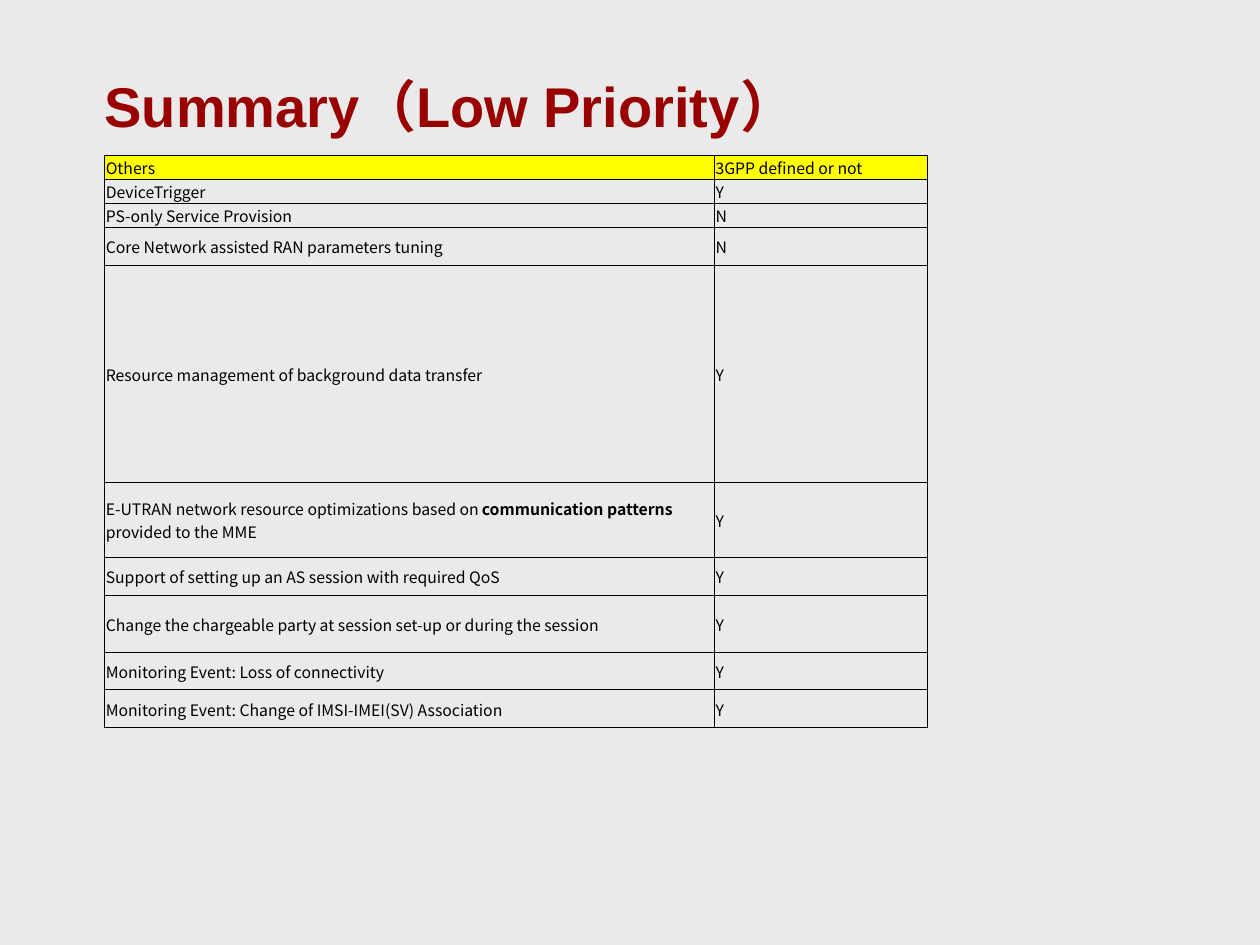
from lxml.etree import SubElement
from pptx import Presentation
from pptx.dml.color import RGBColor
from pptx.enum.text import MSO_ANCHOR, MSO_AUTO_SIZE, PP_ALIGN
from pptx.oxml import parse_xml
from pptx.oxml.ns import nsdecls, qn
from pptx.util import Inches, Pt

COLORS = {"background": "EAEAEA", "title": "990000", "header": "FFFF00", "ink": "000000"}
TITLE_FONT = {"name": "Arial", "size": Pt(32), "bold": True}
CELL_FONT = {"name": "Noto Sans CJK SC", "size": Pt(9), "bold": False}
CELL_FORMAT = {
    "vertical_anchor": MSO_ANCHOR.MIDDLE,
    "margin_left": Inches(0.01),
    "margin_right": Inches(0.01),
    "margin_top": Inches(0.01),
    "margin_bottom": 0,
}
TITLE_FORMAT = {
    "vertical_anchor": MSO_ANCHOR.MIDDLE,
    "auto_size": MSO_AUTO_SIZE.NONE,
    "word_wrap": True,
    "margin_left": 0,
    "margin_right": Inches(0.09),
    "margin_top": Inches(0.04),
    "margin_bottom": Inches(0.04),
}
COLUMN_WIDTHS = [4.84, 1.69]
FEATURES = [
    (0.16, ["Others"], "3GPP defined or not"),
    (0.16, ["DeviceTrigger"], "Y"),
    (0.16, ["PS-only Service Provision"], "N"),
    (0.3, ["Core Network assisted RAN parameters tuning"], "N"),
    (1.72, ["Resource management of background data transfer"], "Y"),
    (0.6, ["E-UTRAN network resource optimizations based on ",
           "communication patterns ", "provided to the MME"], "Y"),
    (0.3, ["Support of setting up an AS session with required QoS"], "Y"),
    (0.45, ["Change the chargeable party at session set-up or during the session"], "Y"),
    (0.3, ["Monitoring Event: Loss of connectivity"], "Y"),
    (0.3, ["Monitoring Event: Change of IMSI-IMEI(SV) Association"], "Y"),
]


def apply(target, values):
    for name, value in values.items():
        setattr(target, name, value)


class SlideBuilder:
    def __init__(self, presentation):
        self.slide = presentation.slides.add_slide(presentation.slide_layouts[5])

    def background(self):
        fill = self.slide.background.fill
        fill.solid()
        fill.fore_color.rgb = RGBColor.from_string(COLORS["background"])

    def run(self, paragraph, text, font, color):
        run = paragraph.add_run()
        run.text = text
        apply(run.font, font)
        run.font.color.rgb = RGBColor.from_string(COLORS[color])
        east_asian = SubElement(run.font._element, qn("a:ea"))
        east_asian.set("typeface", CELL_FONT["name"])

    def title(self, text, left, top, width, height):
        title = self.slide.shapes.title
        apply(title, {"left": Inches(left), "top": Inches(top),
                      "width": Inches(width), "height": Inches(height)})
        apply(title.text_frame, TITLE_FORMAT)
        paragraph = title.text_frame.paragraphs[0]
        paragraph.alignment = PP_ALIGN.LEFT
        self.run(paragraph, text, TITLE_FONT, "title")

    def borders(self, cell):
        properties = cell._tc.get_or_add_tcPr()
        for index, side in enumerate(["lnL", "lnR", "lnT", "lnB"]):
            properties.insert(index, parse_xml(
                f'<a:{side} {nsdecls("a")} w="{Pt(0.5)}"><a:solidFill>'
                f'<a:srgbClr val="{COLORS["ink"]}"/></a:solidFill></a:{side}>'))

    def cell(self, cell, texts, is_header):
        apply(cell, CELL_FORMAT)
        if is_header:
            cell.fill.solid()
            cell.fill.fore_color.rgb = RGBColor.from_string(COLORS["header"])
        else:
            cell.fill.background()
        self.borders(cell)
        for index, text in enumerate(texts):
            font = {**CELL_FONT, "bold": index == 1}
            self.run(cell.text_frame.paragraphs[0], text, font, "ink")

    def table(self, features, left, top):
        height = sum(feature[0] for feature in features)
        table = self.slide.shapes.add_table(
            len(features), len(COLUMN_WIDTHS), Inches(left), Inches(top),
            Inches(sum(COLUMN_WIDTHS)), Inches(height)).table
        apply(table, {"first_row": False, "horz_banding": False})
        for column, width in zip(table.columns, COLUMN_WIDTHS):
            column.width = Inches(width)
        for index, (row_height, feature, defined) in enumerate(features):
            table.rows[index].height = Inches(row_height)
            self.cell(table.cell(index, 0), feature, index == 0)
            self.cell(table.cell(index, 1), [defined], index == 0)


def main():
    presentation = Presentation()
    apply(presentation, {"slide_width": Inches(10), "slide_height": Inches(7.5)})
    builder = SlideBuilder(presentation)
    builder.background()
    builder.title("Summary（Low Priority）", 0.83, 0.36, 8.35, 0.95)
    builder.table(FEATURES, 0.83, 1.23)
    presentation.save("out.pptx")


if __name__ == "__main__":
    main()
